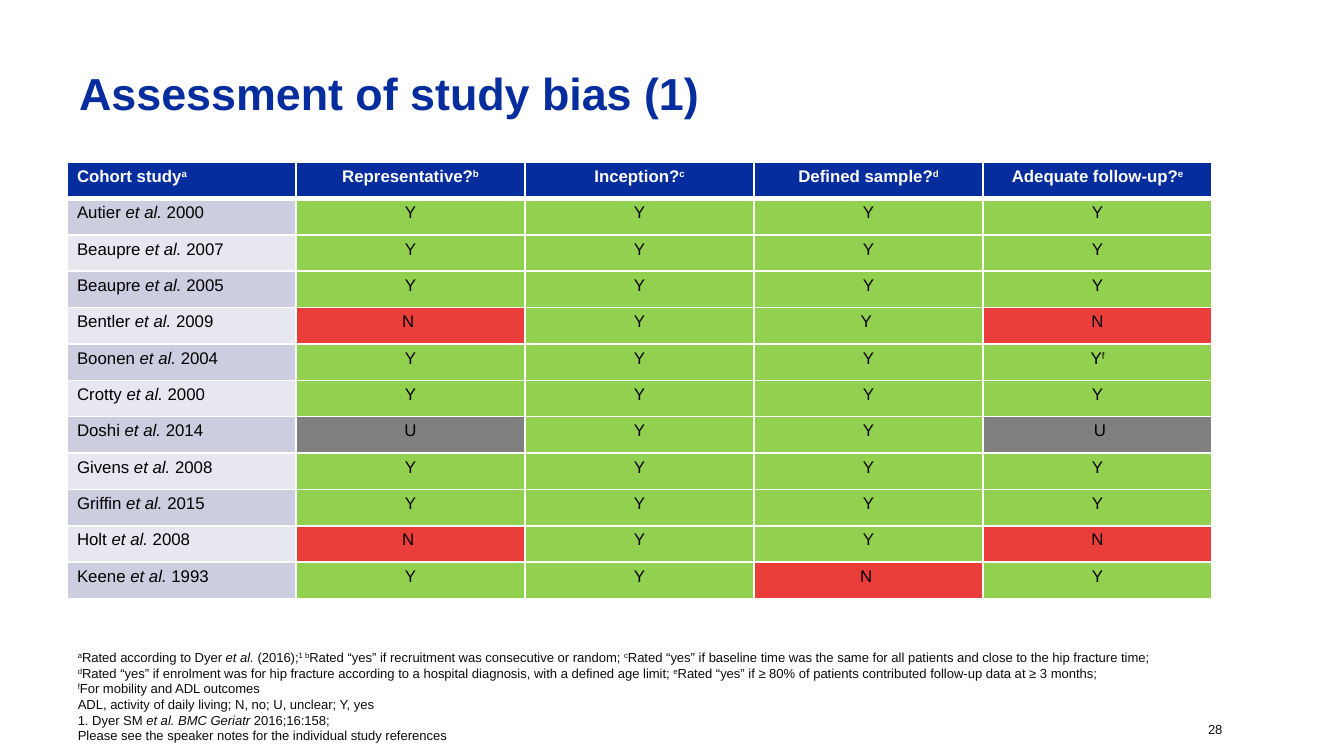
from dataclasses import dataclass

from lxml import etree
from pptx import Presentation
from pptx.dml.color import RGBColor
from pptx.enum.text import MSO_ANCHOR, PP_ALIGN
from pptx.oxml.ns import qn
from pptx.util import Pt

LEFT, CENTER = PP_ALIGN.LEFT, PP_ALIGN.CENTER
MIDDLE, BOTTOM = MSO_ANCHOR.MIDDLE, MSO_ANCHOR.BOTTOM

NAVY = RGBColor(0x05, 0x2D, 0x9D)
WHITE = RGBColor(0xFF, 0xFF, 0xFF)
BLACK = RGBColor(0x00, 0x00, 0x00)
INK = RGBColor(0x0D, 0x0D, 0x0D)
LAVENDER = RGBColor(0xCC, 0xCD, 0xDF)
PALE = RGBColor(0xE7, 0xE8, 0xEF)
RATING_FILL = {
    "Y": RGBColor(0x92, 0xD0, 0x50),
    "N": RGBColor(0xEA, 0x3E, 0x3A),
    "U": RGBColor(0x80, 0x80, 0x80),
}
FONT = "Arial"
COLUMN_WIDTH, ROW_HEIGHT = 122.7, 19.5


@dataclass
class Study:
    name: str
    ratings: tuple[str, ...]


# In all texts, ^x^ is superscript and *x* is italic
HEADERS = ("Cohort study^a^", "Representative?^b^", "Inception?^c^",
           "Defined sample?^d^", "Adequate follow-up?^e^")
ALL_YES = ("Y", "Y", "Y", "Y")
STUDIES = [
    Study("Autier *et al. *2000", ALL_YES),
    Study("Beaupre *et al. *2007", ALL_YES),
    Study("Beaupre *et al. *2005", ALL_YES),
    Study("Bentler *et al. *2009", ("N ", "Y", "Y ", "N")),
    Study("Boonen *et al. *2004", ("Y", "Y", "Y", "Y^f^")),
    Study("Crotty *et al. *2000", ALL_YES),
    Study("Doshi *et al. *2014", ("U", "Y", "Y", " U")),
    Study("Givens *et al.* 2008", ALL_YES),
    Study("Griffin *et al. *2015", ALL_YES),
    Study("Holt *et al. *2008", ("N ", "Y", "Y", "N")),
    Study("Keene *et al. *1993", ("Y", "Y", "N ", "Y")),
]
FOOTNOTES = [
    "^a^Rated according to Dyer *et al. *(2016);^1 b^Rated “yes” if recruitment was "
    "consecutive or random; ^c^Rated “yes” if baseline time was the same for all "
    "patients and close to the hip fracture time; \n"
    "^d^Rated “yes” if enrolment was for hip fracture according to a hospital "
    "diagnosis, with a defined age limit; ^e^Rated “yes” if ≥ 80% of patients "
    "contributed follow-up data at ≥ 3 months; \n"
    "^f^For mobility and ADL outcomes",
    "ADL, activity of daily living; N, no; U, unclear; Y, yes",
    "1. Dyer SM *et al. BMC Geriatr *2016;16:158;",
    "Please see the speaker notes for the individual study references",
]


def write_text(para, text: str, *, size: float, color: RGBColor,
               bold: bool = False, align=LEFT) -> None:
    para.alignment = align
    for number, line in enumerate(text.split("\n")):
        if number:
            para.add_line_break()
            etree.SubElement(para._p[-1], qn("a:rPr"), sz=str(int(size * 100)))
        for i, part in enumerate(line.split("^")):
            for j, piece in enumerate(part.split("*")):
                if not piece:
                    continue
                span = para.add_run()
                span.text = piece
                span.font.name = FONT
                span.font.size = Pt(size)
                span.font.bold = bold
                span.font.italic = j % 2 == 1
                span.font.color.rgb = color
                if i % 2:
                    span.font._element.set("baseline", "30000")


def add_text(page, left: float, top: float, width: float, height: float,
             lines: list[str], *, anchor=MIDDLE, spacing: float = 1.0, **style):
    box = page.shapes.add_textbox(Pt(left), Pt(top), Pt(width), Pt(height))
    frame = box.text_frame
    frame.word_wrap = True
    frame.vertical_anchor = anchor
    for number, line in enumerate(lines):
        para = frame.add_paragraph() if number else frame.paragraphs[0]
        para.line_spacing = spacing
        write_text(para, line, **style)


def set_borders(cell, *, top: float = 1, bottom: float = 1) -> None:
    properties = cell._tc.get_or_add_tcPr()
    for side, width in (("L", 1), ("R", 1), ("T", top), ("B", bottom)):
        line = etree.SubElement(properties, qn(f"a:ln{side}"), w=str(int(Pt(width))))
        fill = etree.SubElement(line, qn("a:solidFill"))
        etree.SubElement(fill, qn("a:srgbClr"), val=str(WHITE))


def fill_cell(cell, text: str, fill: RGBColor, *, top: float = 1,
              bottom: float = 1, **style) -> None:
    cell.margin_left = cell.margin_right = Pt(5.4)
    cell.margin_top = cell.margin_bottom = Pt(2.7)
    set_borders(cell, top=top, bottom=bottom)
    cell.fill.solid()
    cell.fill.fore_color.rgb = fill
    write_text(cell.text_frame.paragraphs[0], text, size=9, **style)


def add_ratings_table(page, left: float, top: float) -> None:
    rows, columns = len(STUDIES) + 1, len(HEADERS)
    table = page.shapes.add_table(
        rows, columns, Pt(left), Pt(top),
        Pt(columns * COLUMN_WIDTH), Pt(rows * ROW_HEIGHT)).table
    for column in table.columns:
        column.width = Pt(COLUMN_WIDTH)
    for row in table.rows:
        row.height = Pt(ROW_HEIGHT)

    for j, header in enumerate(HEADERS):
        fill_cell(table.cell(0, j), header, NAVY, bottom=3, color=WHITE,
                  bold=True, align=CENTER if j else LEFT)
    for i, study in enumerate(STUDIES, 1):
        edge = 3 if i == 1 else 1
        fill_cell(table.cell(i, 0), study.name, LAVENDER if i % 2 else PALE,
                  top=edge, color=BLACK)
        for j, rating in enumerate(study.ratings, 1):
            fill_cell(table.cell(i, j), rating, RATING_FILL[rating.strip()[0]],
                      top=edge, color=BLACK, align=CENTER)


def main() -> None:
    deck = Presentation()
    deck.slide_width, deck.slide_height = Pt(720), Pt(405)
    page = deck.slides.add_slide(deck.slide_layouts[6])

    # Footnotes
    add_text(page, 34.6, 385.2, 626.4, 16.6, FOOTNOTES, anchor=BOTTOM,
             size=7, color=INK)
    # Title
    add_text(page, 35.3, 18, 613.5, 68.4, ["Assessment of study bias (1)"],
             spacing=0.8, size=24, color=NAVY, bold=True)
    # Ratings
    add_ratings_table(page, 35.9, 86.9)
    # Page number
    add_text(page, 640.1, 382.3, 57.6, 16.6, ["28"], size=7, color=INK)

    deck.save("out.pptx")


if __name__ == "__main__":
    main()
